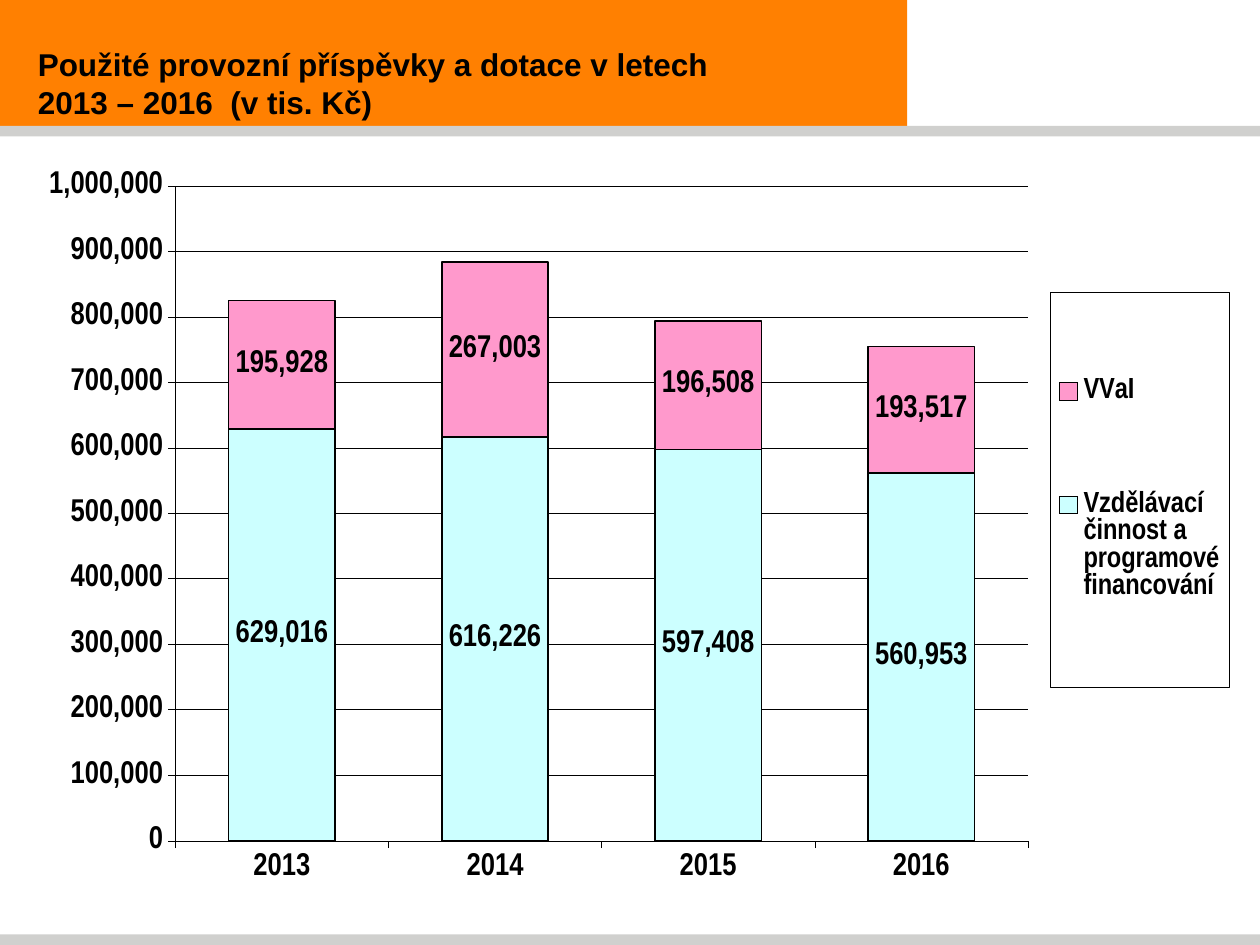
from lxml import etree
from pptx import Presentation
from pptx.chart.data import CategoryChartData
from pptx.dml.color import RGBColor
from pptx.enum.chart import XL_CHART_TYPE as ChartType
from pptx.enum.chart import XL_LABEL_POSITION as LabelPosition
from pptx.enum.chart import XL_LEGEND_POSITION as LegendPosition
from pptx.enum.chart import XL_TICK_LABEL_POSITION as TickLabels
from pptx.enum.chart import XL_TICK_MARK as TickMark
from pptx.enum.shapes import MSO_SHAPE as Shape
from pptx.enum.text import MSO_ANCHOR as Anchor
from pptx.enum.text import MSO_AUTO_SIZE as AutoSize
from pptx.enum.text import PP_ALIGN as Align
from pptx.oxml import parse_xml
from pptx.oxml.ns import nsdecls, qn
from pptx.util import Pt

COLORS = {"orange": "FF8001", "gray": "D0D0CE", "black": "000000",
          "teaching": "CCFFFF", "research": "FF99CC"}


def style_font(font, name, size):
    font.name, font.size, font.bold = name, Pt(size), True
    font.color.rgb = RGBColor.from_string(COLORS["black"])


def make_layout(x, y, w, h, inner=False):
    """Return a manual chart layout given in fractions of the chart."""
    layout = parse_xml(f"<c:layout {nsdecls('c')}><c:manualLayout/></c:layout>")
    settings = [("layoutTarget", "inner")] if inner else []
    settings += [("xMode", "edge"), ("yMode", "edge"),
                 ("x", x), ("y", y), ("w", w), ("h", h)]
    for tag, value in settings:
        etree.SubElement(layout[0], qn(f"c:{tag}")).set("val", str(value))
    return layout


deck = Presentation()
deck.slide_width, deck.slide_height = Pt(720), Pt(540)
page = deck.slides.add_slide(deck.slide_layouts[5])
title = page.shapes.title

# Header band and the two gray rules
bands = [(0, 518.4, "orange", 72), (534, 720, "gray", 6), (72, 720, "gray", 6)]
for top, width, color, height in bands:
    band = page.shapes.add_shape(Shape.RECTANGLE, 0, Pt(top), Pt(width), Pt(height))
    band.shadow.inherit = False
    band.fill.solid()
    band.fill.fore_color.rgb = RGBColor.from_string(COLORS[color])
    band.line.fill.background()

# Stacked column chart
data = CategoryChartData(number_format="#,##0")
data.categories = ["2013", "2014", "2015", "2016"]
data.add_series("Vzdělávací činnost a programové financování",
                (629016, 616226, 597408, 560953))
data.add_series("VVaI", (195928, 267003, 196508, 193517))
chart = page.shapes.add_chart(ChartType.COLUMN_STACKED, Pt(28.08), Pt(97.92),
                              Pt(678.24), Pt(428.4), data).chart
style_font(chart.font, "Arial Narrow", 18)
chart.has_title = False

plot = chart.plots[0]
plot.gap_width, plot.overlap = 100, 100
plot.vary_by_categories = False
for series, color in zip(plot.series, ("teaching", "research")):
    series.format.fill.solid()
    series.format.fill.fore_color.rgb = RGBColor.from_string(COLORS[color])
    series.format.line.color.rgb = RGBColor.from_string(COLORS["black"])
    series.format.line.width = Pt(1)
    labels = series.data_labels
    labels.show_value = True
    labels.number_format, labels.number_format_is_linked = "#,##0", False
    labels.position = LabelPosition.CENTER
    style_font(labels.font, "Arial Narrow", 18)

years, amounts = chart.category_axis, chart.value_axis
years.tick_label_position = TickLabels.LOW
amounts.minimum_scale, amounts.maximum_scale = 0, 1000000
amounts.major_unit = 100000
amounts.has_major_gridlines = True
amounts.tick_labels.number_format = "#,##0"
amounts.tick_labels.number_format_is_linked = False
for axis in (years, amounts):
    axis.major_tick_mark, axis.minor_tick_mark = TickMark.OUTSIDE, TickMark.NONE
    style_font(axis.tick_labels.font, "Arial Narrow", 18)
for part in (years, amounts, amounts.major_gridlines):
    part.format.line.color.rgb = RGBColor.from_string(COLORS["black"])
    part.format.line.width = Pt(0.25)

chart.has_legend = True
legend = chart.legend
legend.position = LegendPosition.RIGHT
legend.include_in_layout = False
style_font(legend.font, "Arial Narrow", 16.6)

# Fixed places for plot and legend, and the legend frame
plot_area = chart.element.find(".//" + qn("c:plotArea"))
for box, layout in ((plot_area, make_layout(0.098, 0.019, 0.725, 0.874, inner=True)),
                    (legend.element if hasattr(legend, "element") else
                     chart.element.find(".//" + qn("c:legend")),
                     make_layout(0.842, 0.161, 0.152, 0.527))):
    for old in box.findall(qn("c:layout")):
        box.remove(old)
    if box is plot_area:
        box.insert(0, layout)
    else:
        overlay = box.find(qn("c:overlay"))
        overlay.addprevious(layout)
        overlay.addnext(parse_xml(
            f"<c:spPr {nsdecls('c', 'a')}><a:noFill/><a:ln w='3175'><a:solidFill>"
            f"<a:srgbClr val='{COLORS['black']}'/></a:solidFill></a:ln></c:spPr>"))

# Title, in front of the header band
title.left, title.top, title.width, title.height = Pt(0), Pt(23), Pt(518.4), Pt(49)
page.shapes._spTree.append(title.element)
frame = title.text_frame
frame.text = "Použité provozní příspěvky a dotace v letech\v2013 – 2016  (v tis. Kč)"
frame.word_wrap, frame.auto_size = True, AutoSize.NONE
frame.vertical_anchor = Anchor.MIDDLE
frame.margin_left = Pt(21.6)
para = frame.paragraphs[0]
para.alignment = Align.LEFT
for span in para.runs:
    style_font(span.font, "Arial", 18)

deck.save("out.pptx")
